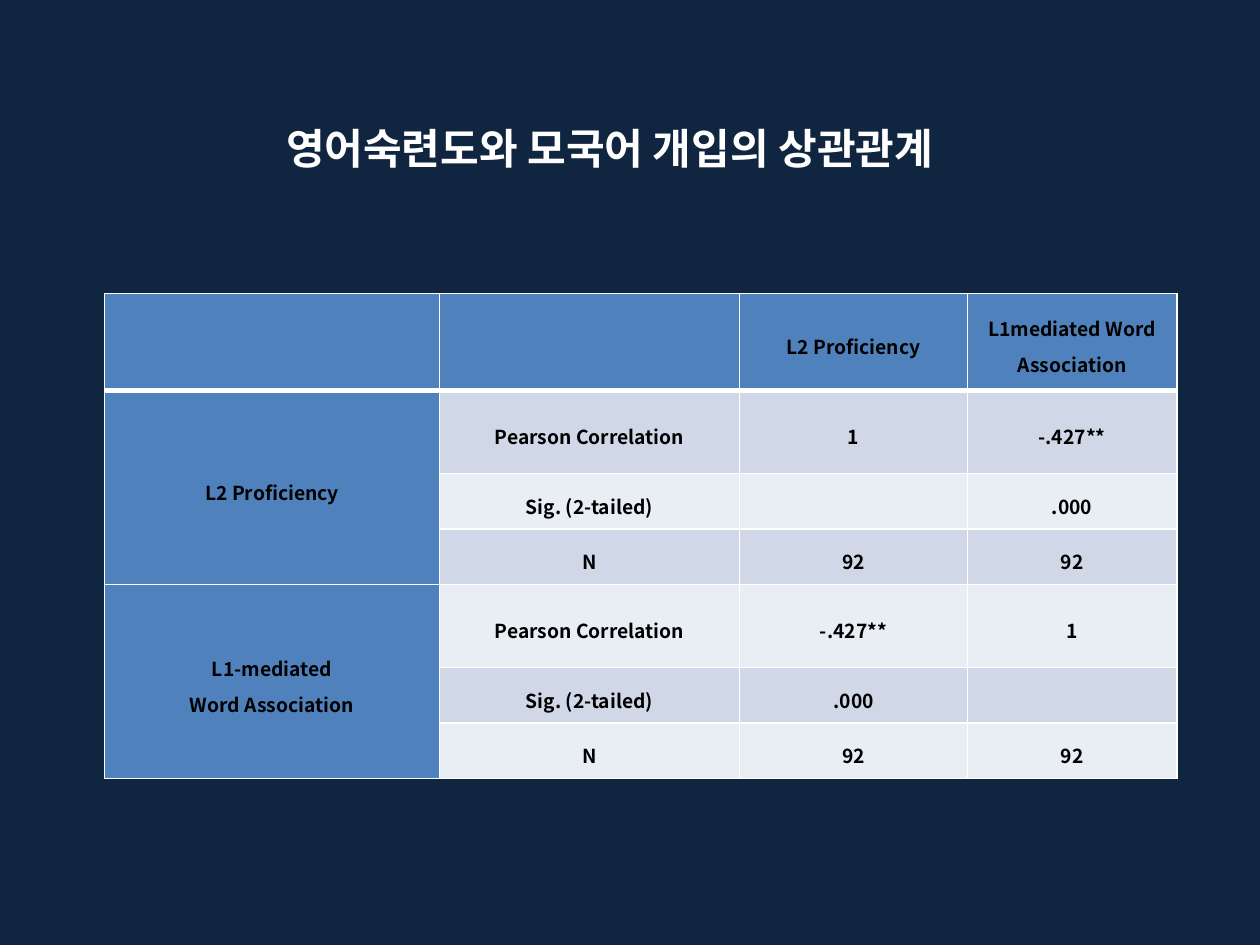
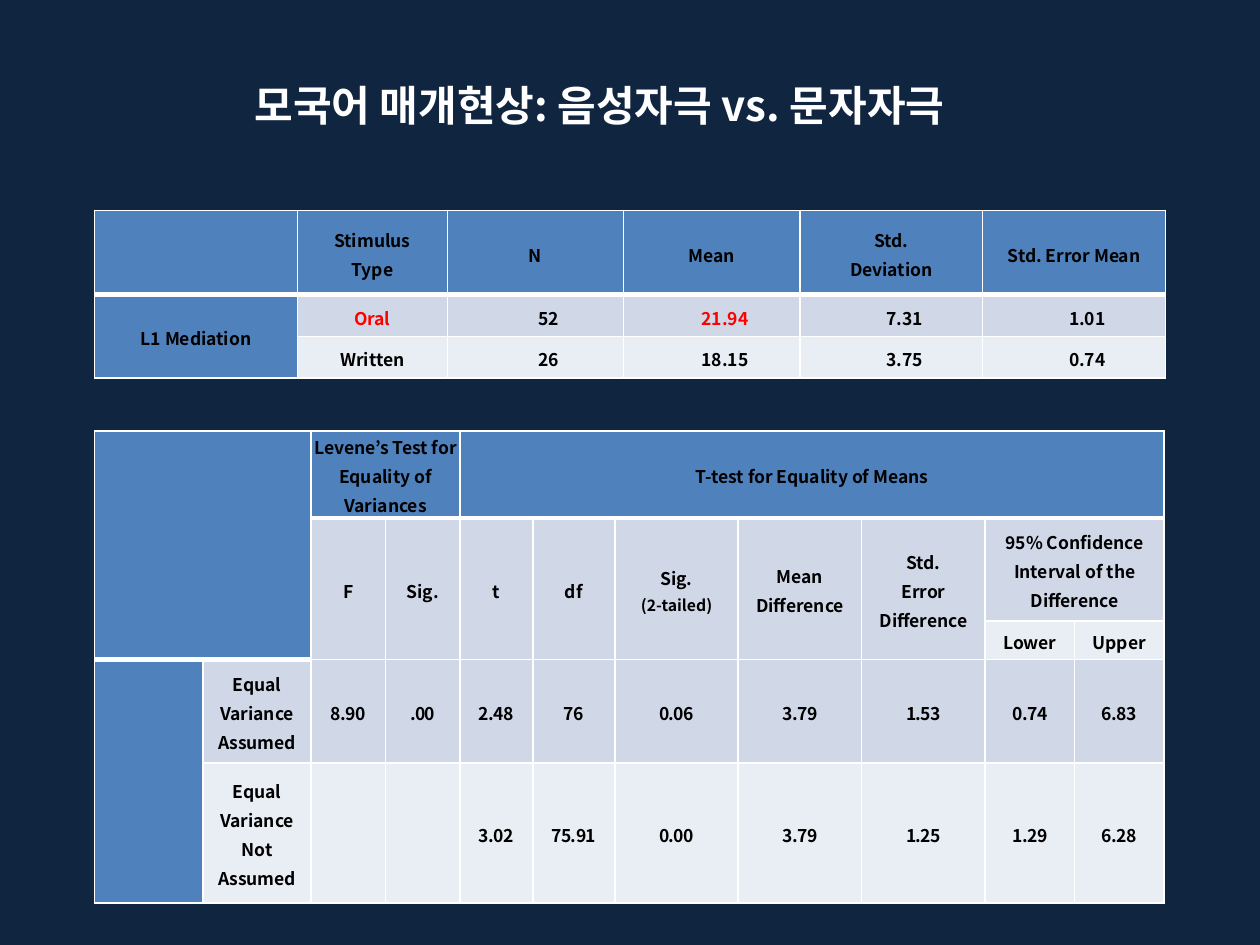
from lxml import etree
from pptx import Presentation
from pptx import util as u
from pptx.dml.color import RGBColor
from pptx.enum import text
from pptx.oxml.ns import qn

FONT = "Noto Sans CJK KR"
COLORS = {"navy": "10253F", "header": "4F81BD", "odd": "D0D8E8", "even": "E9EDF4",
          "white": "FFFFFF", "black": "000000", "red": "FF0000"}
THIN, THICK = 1, 3


def style(para, size, color):
    para.font.size = u.Pt(size)
    para.font.bold = True
    para.font.name = FONT
    para.font.color.rgb = RGBColor.from_string(COLORS[color])
    etree.SubElement(para.font._rPr, qn("a:ea"), typeface=FONT)


def set_borders(cell, top, bottom):
    props = cell._tc.get_or_add_tcPr()
    widths = {"lnL": THIN, "lnR": THIN, "lnT": top, "lnB": bottom}
    for index, (tag, width) in enumerate(widths.items()):
        line = etree.Element(qn("a:" + tag), w=str(u.Pt(width)))
        fill = etree.SubElement(line, qn("a:solidFill"))
        etree.SubElement(fill, qn("a:srgbClr"), val=COLORS["white"])
        props.insert(index, line)


# Tables: corner gives the rows and columns of the top left header,
# merges give row, column, row span and column span
correlation = {
    "at": (0.83, 2.33), "size": 11, "spacing": 1.3, "margin": 0.04, "corner": (1, 1),
    "columns": [2.66, 2.38, 1.81, 1.66],
    "rows": [0.77] + [0.66, 0.44, 0.44] * 2,
    "merges": [(1, 0, 3, 1), (4, 0, 3, 1)],
    "cells": [
        ["", "", "L2 Proficiency", "L1mediated Word Association"],
        ["L2 Proficiency", "Pearson Correlation", "1", "-.427**"],
        ["", "Sig. (2-tailed)", "", ".000"],
        ["", "N", "92", "92"],
        ["L1-mediated\nWord Association", "Pearson Correlation", "-.427**", "1"],
        ["", "Sig. (2-tailed)", ".000", ""],
        ["", "N", "92", "92"],
    ],
}
group_means = {
    "at": (0.75, 1.67), "size": 10, "spacing": 1.15, "margin": 0, "corner": (1, 1),
    "columns": [1.61, 1.19, 1.4, 1.4, 1.45, 1.45],
    "rows": [0.67, 0.33, 0.33],
    "merges": [(1, 0, 2, 1)],
    "red": [(1, 1), (1, 3)],
    "indent_from": (1, 2),
    "cells": [
        ["", "Stimulus\nType", "N", "Mean", "Std.\nDeviation", "Std. Error Mean"],
        ["L1 Mediation", "Oral", "52", "21.94", "7.31", "1.01"],
        ["", "Written", "26", "18.15", "3.75", "0.74"],
    ],
}
t_test = {
    "at": (0.75, 3.42), "size": 10, "spacing": 1.15, "margin": 0, "corner": (3, 2),
    "columns": [0.86, 0.86, 0.59, 0.59, 0.58, 0.65, 0.98, 0.98, 0.98, 0.71, 0.71],
    "rows": [0.57, 0.82, 0.26, 0.82, 1.11],
    "merges": [(0, 0, 3, 2), (0, 2, 1, 2), (0, 4, 1, 7), (1, 9, 1, 2), (3, 0, 2, 1)]
              + [(1, column, 2, 1) for column in range(2, 9)],
    "tight_from": (3, 2),
    "cells": [
        ["", "", "Levene’s Test for Equality of Variances", "",
         "T-test for Equality of Means", "", "", "", "", "", ""],
        ["", "", "F", "Sig.", "t", "df", "Sig.\n(2-tailed)", "Mean Difference",
         "Std.\nError Difference", "95% Confidence Interval of the Difference", ""],
        ["", "", "", "", "", "", "", "", "", "Lower", "Upper"],
        ["", "Equal Variance Assumed", "8.90", ".00", "2.48", "76", "0.06",
         "3.79", "1.53", "0.74", "6.83"],
        ["", "Equal Variance Not Assumed", "", "", "3.02", "75.91", "0.00",
         "3.79", "1.25", "1.29", "6.28"],
    ],
}
pages = [
    ("영어숙련도와 모국어 개입의 상관관계", (2.17, 0.92, 8.33, 0.51), [correlation]),
    ("모국어 매개현상: 음성자극 vs. 문자자극", (1.92, 0.58, 6.15, 0.51), [group_means, t_test]),
]

deck = Presentation()
deck.slide_width, deck.slide_height = u.Inches(10), u.Inches(7.5)
backdrop = deck.slide_master.background.fill
backdrop.solid()
backdrop.fore_color.rgb = RGBColor.from_string(COLORS["navy"])

for heading, place, tables in pages:
    page = deck.slides.add_slide(deck.slide_layouts[5])

    # Title
    title = page.shapes.title
    title.left, title.top, title.width, title.height = map(u.Inches, place)
    title.text_frame.text = heading
    title.text_frame.word_wrap = True
    title.text_frame.auto_size = text.MSO_AUTO_SIZE.NONE
    title.text_frame.vertical_anchor = text.MSO_ANCHOR.MIDDLE
    para = title.text_frame.paragraphs[0]
    para.alignment = text.PP_ALIGN.LEFT
    style(para, 24, "white")

    for data in tables:
        # Grid
        columns, rows = data["columns"], data["rows"]
        extent = (*data["at"], sum(columns), sum(rows))
        table = page.shapes.add_table(len(rows), len(columns), *map(u.Inches, extent)).table
        table.first_row = table.horz_banding = False
        for column, width in zip(table.columns, columns):
            column.width = u.Inches(width)
        for row, height in zip(table.rows, rows):
            row.height = u.Inches(height)

        # Cells
        corner_rows, corner_columns = data["corner"]
        for r, line in enumerate(data["cells"]):
            for c, words in enumerate(line):
                cell = table.cell(r, c)
                header_rows = corner_rows if c < corner_columns else 1
                is_header = r < header_rows or c == 0
                shade = "header" if is_header else "odd" if r % 2 else "even"
                cell.fill.solid()
                cell.fill.fore_color.rgb = RGBColor.from_string(COLORS[shade])
                set_borders(cell, top=THICK if r == header_rows else THIN,
                            bottom=THICK if r < header_rows else THIN)
                cell.vertical_anchor = text.MSO_ANCHOR.MIDDLE
                cell.margin_left = cell.margin_right = 0
                cell.margin_top = cell.margin_bottom = u.Inches(data["margin"])
                if not words:
                    continue
                cell.text = words
                color = "red" if (r, c) in data.get("red", []) else "black"
                indent_row, indent_column = data.get("indent_from", (99, 99))
                tight_row, tight_column = data.get("tight_from", (99, 99))
                for para in cell.text_frame.paragraphs:
                    para.alignment = text.PP_ALIGN.CENTER
                    para.line_spacing = data["spacing"]
                    style(para, 9 if para.text == "(2-tailed)" else data["size"], color)
                    if r >= indent_row and c >= indent_column:
                        para._p.get_or_add_pPr().set("marL", str(u.Inches(0.21)))
                    if r >= tight_row and c >= tight_column:
                        para.font._rPr.set("spc", "-30")

        for r, c, row_span, column_span in data["merges"]:
            table.cell(r, c).merge(table.cell(r + row_span - 1, c + column_span - 1))

deck.save("out.pptx")
